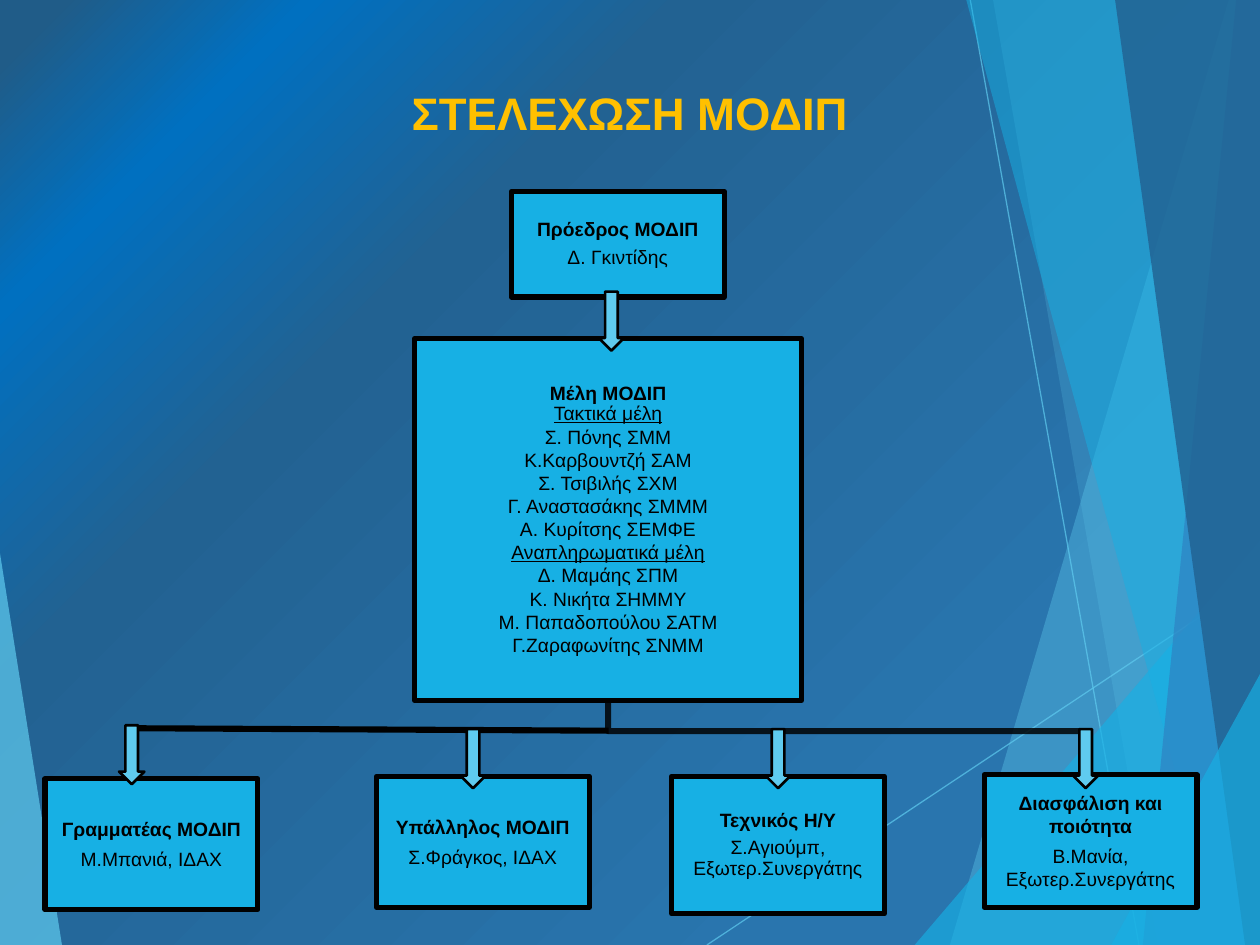
from dataclasses import dataclass

from lxml import etree
from pptx import Presentation
from pptx import util as u
from pptx.dml.color import RGBColor
from pptx.enum import shapes, text
from pptx.oxml import parse_xml
from pptx.oxml.ns import nsdecls, qn

COLORS = {
    "black": "000000",
    "title": "FFC000",
    "box": "17B0E4",
    "light": "5FCBEF",
    "blue": "2E83C3",
    "dark": "226292",
}
BACKGROUND = [(23, "2975AE"), (69, "226292"), (86, "0070C0"), (97, "205C88")]
WIDTH, HEIGHT = 25.4, 19.05
BOX_WIDTH = 4.29
TOP_RIGHT, BOTTOM_RIGHT, BOTTOM_LEFT = (WIDTH, 0), (WIDTH, HEIGHT), (0, HEIGHT)


@dataclass
class Facet:
    points: list[tuple[float, float]]
    color: str
    alpha: int


@dataclass
class Line:
    start: tuple[float, float]
    end: tuple[float, float]
    color: str = "black"
    width: float = 3.5
    alpha: int = 100


@dataclass
class Para:
    text: str
    bold: bool = False
    underline: bool = False
    spacing: float = 1.0
    after: float = 0
    size: float = 11
    color: str = "black"


@dataclass
class Box:
    left: float
    top: float
    height: float
    paras: list[Para]
    width: float = BOX_WIDTH
    anchor: text.MSO_ANCHOR = text.MSO_ANCHOR.MIDDLE
    inset_top: float = 0.03


@dataclass
class Arrow:
    left: float
    top: float


def post(role: str, person: str, spacing: float = 1.0) -> list[Para]:
    return [Para(role, bold=True, spacing=spacing, after=3.9),
            Para(person, spacing=spacing, after=3.9)]


def band(top: float, bottom: float) -> list[tuple[float, float]]:
    return [(top, 0), (bottom, HEIGHT), BOTTOM_RIGHT, TOP_RIGHT]


def wedge(bottom: float, right: float) -> list[tuple[float, float]]:
    return [(bottom, HEIGHT), (WIDTH, right), BOTTOM_RIGHT]


LEFT_FACET = Facet([(0, 11.15), (1.25, HEIGHT), BOTTOM_LEFT], "light", 70)
RAYS = [
    Line((14.25, HEIGHT), (WIDTH, 11.63), "light", 0.75, 70),
    Line((19.56, 0), (22.96, HEIGHT), "light", 0.75, 70),
]
RIGHT_FACETS = [
    Facet(band(24.77, 19.15), "light", 36),
    Facet(band(20.02, 23.34), "light", 20),
    Facet(wedge(18.44, 10.9), "box", 66),
    Facet(band(19.48, 24.64), "box", 50),
    Facet(band(24.92, 23.04), "blue", 70),
    Facet(band(22.48, 25.1), "dark", 82),
    Facet(wedge(22.4, 13.59), "box", 66),
]
MEMBERS = [
    Para("Μέλη ΜΟΔΙΠ", bold=True, spacing=0.9),
    Para("Τακτικά μέλη", underline=True, spacing=0.9),
    Para("Σ. Πόνης ΣΜΜ"),
    Para("Κ.Καρβουντζή ΣΑΜ"),
    Para("Σ. Τσιβιλής ΣΧΜ"),
    Para("Γ. Αναστασάκης ΣΜΜΜ"),
    Para("Α. Κυρίτσης ΣΕΜΦΕ"),
    Para("Αναπληρωματικά μέλη", underline=True),
    Para("Δ. Μαμάης ΣΠΜ"),
    Para("Κ. Νικήτα ΣΗΜΜΥ"),
    Para("Μ. Παπαδοπούλου ΣΑΤΜ"),
    Para("Γ.Ζαραφωνίτης ΣΝΜΜ"),
]
BOXES = [
    Box(10.31, 3.86, 2.13, post("Πρόεδρος ΜΟΔΙΠ", "Δ. Γκιντίδης", 0.9)),
    Box(13.54, 15.65, 2.77, post("Τεχνικός Η/Υ", "Σ.Αγιούμπ, Εξωτερ.Συνεργάτης", 0.9)),
    Box(19.84, 15.62, 2.67, post("Διασφάλιση και ποιότητα", "Β.Μανία, Εξωτερ.Συνεργάτης")),
    Box(7.59, 15.65, 2.64, post("Υπάλληλος ΜΟΔΙΠ", "Σ.Φράγκος, ΙΔΑΧ")),
    Box(8.36, 6.83, 7.29, MEMBERS, 7.8, text.MSO_ANCHOR.TOP, 0.9),
    Box(0.91, 15.7, 2.64, post("Γραμματέας ΜΟΔΙΠ", "Μ.Μπανιά, ΙΔΑΧ")),
]
ARROWS = [Arrow(2.06, 14.96), Arrow(8.94, 15.04), Arrow(11.73, 6.22),
          Arrow(15.09, 15.04), Arrow(21.29, 15.04)]


def rgb(name: str) -> RGBColor:
    return RGBColor.from_string(COLORS[name])


def set_alpha(sp, alpha: int) -> None:
    for clr in sp._element.spPr.iter(qn("a:srgbClr")):
        etree.SubElement(clr, qn("a:alpha")).set("val", str(alpha * 1000))


def set_background(s) -> None:
    stops = "".join(f'<a:gs pos="{pos * 1000}"><a:srgbClr val="{c}"/></a:gs>'
                    for pos, c in BACKGROUND)
    s._element.cSld.insert(0, parse_xml(
        f'<p:bg {nsdecls("p", "a")}><p:bgPr><a:gradFill rotWithShape="1">'
        f'<a:gsLst>{stops}</a:gsLst><a:path path="circle">'
        '<a:fillToRect l="100000" t="100000"/></a:path></a:gradFill>'
        '<a:effectLst/></p:bgPr></p:bg>'))


def draw_facet(s, facet: Facet) -> None:
    points = [(u.Cm(x), u.Cm(y)) for x, y in facet.points]
    fb = s.shapes.build_freeform(*points[0])
    fb.add_line_segments(points[1:])
    sp = fb.convert_to_shape()
    sp.shadow.inherit = False
    sp.fill.solid()
    sp.fill.fore_color.rgb = rgb(facet.color)
    sp.line.fill.background()
    set_alpha(sp, facet.alpha)


def draw_line(s, line: Line, kind=shapes.MSO_CONNECTOR.STRAIGHT):
    cxn = s.shapes.add_connector(kind, *map(u.Cm, line.start + line.end))
    cxn.line.color.rgb = rgb(line.color)
    cxn.line.width = u.Pt(line.width)
    etree.SubElement(cxn._element.spPr, qn("a:effectLst"))
    set_alpha(cxn, line.alpha)
    return cxn


def draw_elbow(s) -> None:
    line = Line((17.43, 9.57), (16.82, 19.3), alpha=84)
    cxn = draw_line(s, line, shapes.MSO_CONNECTOR.ELBOW)
    spPr = cxn._element.spPr
    spPr.find(qn("a:xfrm")).set("rot", str(270 * 60000))
    spPr.find(qn("a:prstGeom")).set("prst", "bentConnector2")


def write(tf, paras: list[Para], anchor, top: float, side: float) -> None:
    tf.word_wrap = True
    tf.vertical_anchor = anchor
    tf.margin_top = u.Cm(top)
    tf.margin_left = tf.margin_right = tf.margin_bottom = u.Cm(side)
    for i, para in enumerate(paras):
        p = tf.add_paragraph() if i else tf.paragraphs[0]
        p.alignment = text.PP_ALIGN.CENTER
        p.line_spacing = para.spacing
        p.space_after = u.Pt(para.after)
        r = p.add_run()
        r.text = para.text
        r.font.name = "Arial"
        r.font.size = u.Pt(para.size)
        r.font.bold = para.bold
        r.font.underline = para.underline
        r.font.color.rgb = rgb(para.color)


def draw_shape(s, kind, frame: tuple, fill: str, line_width: float):
    sp = s.shapes.add_shape(kind, *map(u.Cm, frame))
    sp.shadow.inherit = False
    sp.fill.solid()
    sp.fill.fore_color.rgb = rgb(fill)
    sp.line.color.rgb = rgb("black")
    sp.line.width = u.Pt(line_width)
    return sp


def main() -> None:
    prs = Presentation()
    prs.slide_width, prs.slide_height = u.Cm(WIDTH), u.Cm(HEIGHT)
    s = prs.slides.add_slide(prs.slide_layouts[6])
    set_background(s)
    draw_facet(s, LEFT_FACET)
    for ray in RAYS:
        draw_line(s, ray)
    for facet in RIGHT_FACETS:
        draw_facet(s, facet)
    title = s.shapes.add_textbox(*map(u.Cm, (0, 1.22, WIDTH, 1.6)))
    write(title.text_frame, [Para("ΣΤΕΛΕΧΩΣΗ ΜΟΔΙΠ", bold=True, size=26, color="title")],
          text.MSO_ANCHOR.BOTTOM, 0.13, 0)
    for box in BOXES:
        frame = (box.left, box.top, box.width, box.height)
        sp = draw_shape(s, shapes.MSO_SHAPE.RECTANGLE, frame, "box", 3)
        write(sp.text_frame, box.paras, box.anchor, box.inset_top, 0.03)
    draw_elbow(s)
    draw_line(s, Line((12.27, 14.73), (2.64, 14.68)))
    for arrow in ARROWS:
        frame = (arrow.left, arrow.top, 1.19, 0.51)
        draw_shape(s, shapes.MSO_SHAPE.RIGHT_ARROW, frame, "light", 1.5).rotation = 90
    prs.save("out.pptx")


if __name__ == "__main__":
    main()
